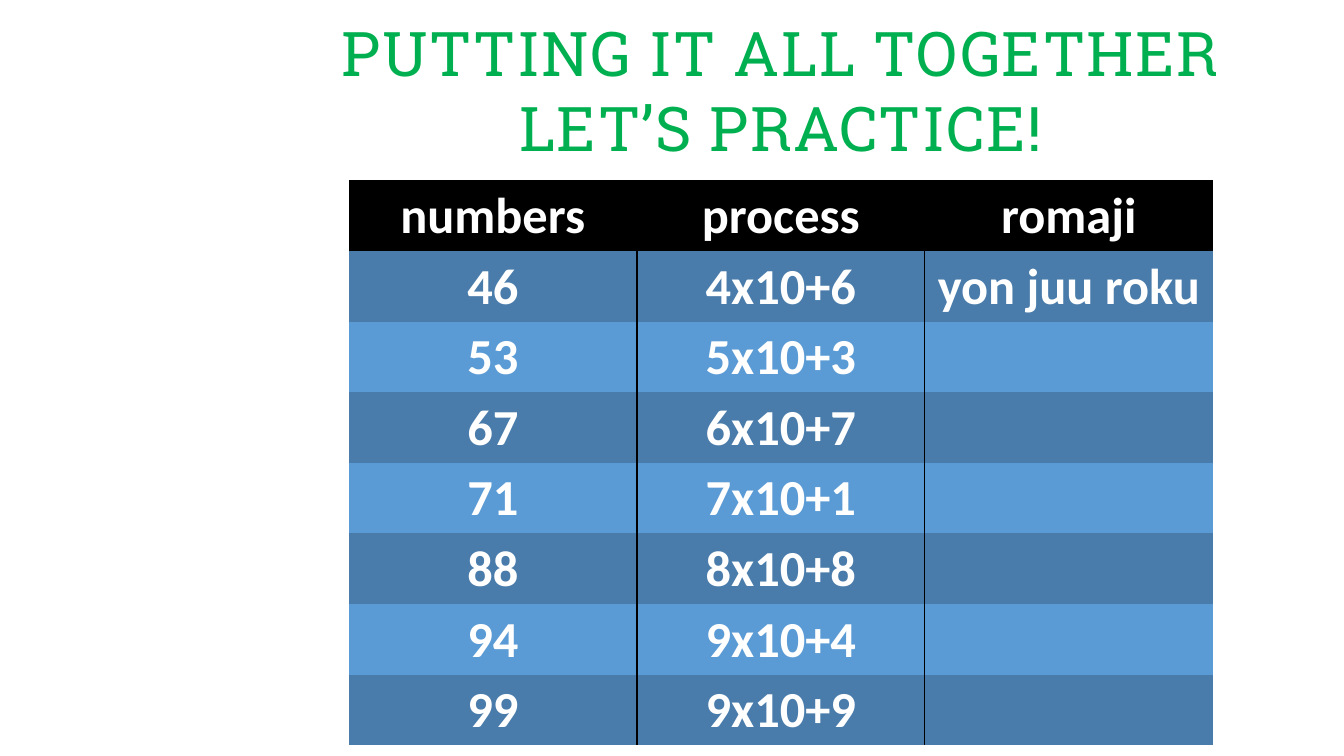
from lxml import etree
from pptx import Presentation
from pptx.dml.color import RGBColor
from pptx.enum.text import MSO_ANCHOR, MSO_AUTO_SIZE, PP_ALIGN
from pptx.oxml.ns import qn
from pptx.util import Inches, Pt

BLACK = RGBColor(0x00, 0x00, 0x00)
WHITE = RGBColor(0xFF, 0xFF, 0xFF)
GREEN = RGBColor(0x00, 0xB0, 0x50)
DARK_BLUE = RGBColor(0x49, 0x7C, 0xAB)
LIGHT_BLUE = RGBColor(0x5B, 0x9B, 0xD5)
NO_GRID_STYLE = "{2D5ABB26-0587-4C30-8999-92F81FD0307C}"

HEADINGS = ("numbers", "process", "romaji")
NUMBERS = (46, 53, 67, 71, 88, 94, 99)
ROMAJI = {46: "yon juu roku"}


def write(tf, *lines, font, size, color, bold=False, tracking=0, leading=None):
    """Fill a text frame with centred lines; tracking and leading are in points."""
    for i, line in enumerate(lines):
        p = tf.paragraphs[0] if i == 0 else tf.add_paragraph()
        p.alignment = PP_ALIGN.CENTER
        p.space_before = Pt(0)
        if leading:
            p.line_spacing = Pt(leading)
        r = p.add_run()
        r.text = line
        r.font.name, r.font.size, r.font.bold = font, Pt(size), bold
        r.font.color.rgb = color
        if tracking:
            r.font._element.set("spc", str(tracking * 100))


def draw_side(cell, side, color, width):
    """Draw the left ("L") or right ("R") border of a cell, under its fill in the XML."""
    ln = etree.Element(qn(f"a:ln{side}"), w=str(Pt(width)))
    fill = etree.SubElement(ln, qn("a:solidFill"))
    etree.SubElement(fill, qn("a:srgbClr"), val=str(color))
    tc_pr = cell._tc.get_or_add_tcPr()
    borders = [el for el in tc_pr if el.tag in (qn("a:lnL"), qn("a:lnR"))]
    tc_pr.insert(len(borders), ln)


class PracticeSlide:
    title_font = "Roboto Slab"
    table_font = "Calibri"

    def __init__(self, prs):
        self.width, self.height = prs.slide_width, prs.slide_height
        self.slide = prs.slides.add_slide(prs.slide_layouts[5])

    def place(self, left, top, width, height):
        """Turn shares of the slide's size into lengths."""
        return (round(left * self.width), round(top * self.height),
                round(width * self.width), round(height * self.height))

    def title(self, *lines, at):
        s = self.slide.shapes.title
        s.left, s.top, s.width, s.height = self.place(*at)
        tf = s.text_frame
        tf.word_wrap = False
        tf.auto_size = MSO_AUTO_SIZE.SHAPE_TO_FIT_TEXT
        tf.vertical_anchor = MSO_ANCHOR.TOP
        write(tf, *lines, font=self.title_font, size=44, color=GREEN,
              tracking=1, leading=53)

    def table(self, rows, at):
        n_cols = len(rows[0])
        frame = self.slide.shapes.add_table(len(rows), n_cols, *self.place(*at))
        table = frame.table
        table._tbl.tblPr.find(qn("a:tableStyleId")).text = NO_GRID_STYLE
        for i, row in enumerate(rows):
            band = DARK_BLUE if i % 2 else LIGHT_BLUE
            for j, text in enumerate(row):
                cell = table.cell(i, j)
                cell.fill.solid()
                cell.fill.fore_color.rgb = band if i else BLACK
                if j > 0:
                    draw_side(cell, "L", BLACK, 1)
                if j < n_cols - 1:
                    draw_side(cell, "R", BLACK, 1)
                if text:
                    write(cell.text_frame, text, font=self.table_font, size=36,
                          color=WHITE, bold=True)


def main():
    prs = Presentation()
    prs.slide_width, prs.slide_height = Inches(13.33), Inches(7.5)
    practice = PracticeSlide(prs)
    practice.title("PUTTING IT ALL TOGETHER", "LET’S PRACTICE!",
                   at=(0.2183, 0.0133, 0.7254, 0.2107))
    rows = [HEADINGS]
    for number in NUMBERS:
        tens, ones = divmod(number, 10)
        rows.append((str(number), f"{tens}x10+{ones}", ROMAJI.get(number, "")))
    practice.table(rows, at=(0.2596, 0.2387, 0.6429, 0.7467))
    prs.save("out.pptx")


if __name__ == "__main__":
    main()
